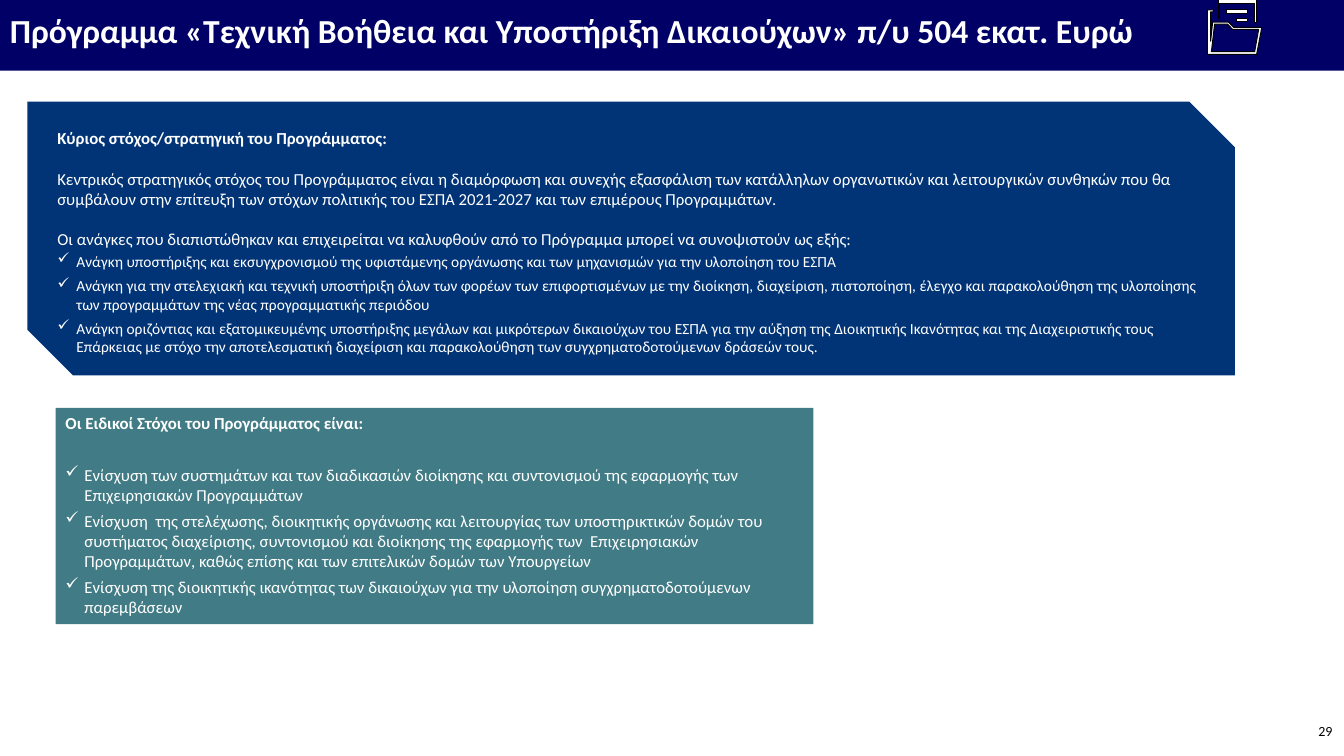
from lxml.etree import SubElement
from pptx import Presentation
from pptx.dml.color import RGBColor
from pptx.enum.shapes import MSO_SHAPE
from pptx.enum.text import MSO_ANCHOR, MSO_AUTO_SIZE, PP_ALIGN
from pptx.oxml.ns import qn
from pptx.util import Cm, Pt

WHITE = RGBColor(0xFF, 0xFF, 0xFF)
BLACK = RGBColor(0, 0, 0)
NAVY = RGBColor(0x00, 0x00, 0x66)
BLUE = RGBColor(0x01, 0x34, 0x76)
TEAL = RGBColor(0x41, 0x7B, 0x85)

EVEN_MARGINS = dict.fromkeys(
    ("margin_left", "margin_top", "margin_right", "margin_bottom"), Cm(0.25))
TIGHT_MARGINS = {"margin_left": Cm(0.18), "margin_right": Cm(0.18),
                 "margin_top": Cm(0.08), "margin_bottom": Cm(0.08)}
LINE_GAP = Pt(14.65)
TICK_SPACING = {"space_before": Pt(2), "space_after": Pt(2)}
HEADING = {"bold": True}
SMALL = {"size": Pt(11)}

PAPER = [[(3167, 58), (3162, 58), (3162, 8), (3073, 8), (3073, 46), (3071, 46),
          (3071, 0), (3167, 0)]]
FOLDER = [[(3109, 69), (3096, 56), (3056, 56), (3051, 104), (3051, 30), (3058, 30),
           (3058, 25), (3043, 25), (3043, 137), (3167, 137), (3180, 69)],
          [(3162, 130), (3053, 130), (3061, 61), (3094, 61), (3106, 74), (3172, 74)]]
PAPER_LINES = [(30.91, 0.25, 0.53, 0.08), (31.17, 0.46, 0.28, 0.08)]

GOAL = [
    ("Κύριος στόχος/στρατηγική του Προγράμματος:", HEADING, {}),
    ("Κεντρικός στρατηγικός στόχος του Προγράμματος είναι η διαμόρφωση και συνεχής "
     "εξασφάλιση των κατάλληλων οργανωτικών και λειτουργικών συνθηκών που θα συμβάλουν "
     "στην επίτευξη των στόχων πολιτικής του ΕΣΠΑ 2021-2027 και των επιμέρους "
     "Προγραμμάτων.", {}, {"space_before": LINE_GAP}),
    ("Οι ανάγκες που διαπιστώθηκαν και επιχειρείται να καλυφθούν από το Πρόγραμμα "
     "μπορεί να συνοψιστούν ως εξής:", {}, {"space_before": LINE_GAP}),
]
NEEDS = [
    "Ανάγκη υποστήριξης και εκσυγχρονισμού της υφιστάμενης οργάνωσης και των μηχανισμών "
    "για την υλοποίηση του ΕΣΠΑ",
    "Ανάγκη για την στελεχιακή και τεχνική υποστήριξη όλων των φορέων των επιφορτισμένων "
    "με την διοίκηση, διαχείριση, πιστοποίηση, έλεγχο και παρακολούθηση της υλοποίησης "
    "των προγραμμάτων της νέας προγραμματικής περιόδου",
    "Ανάγκη οριζόντιας και εξατομικευμένης υποστήριξης μεγάλων και μικρότερων δικαιούχων "
    "του ΕΣΠΑ για την αύξηση της Διοικητικής Ικανότητας και της Διαχειριστικής τους "
    "Επάρκειας με στόχο την αποτελεσματική διαχείριση και παρακολούθηση των "
    "συγχρηματοδοτούμενων δράσεών τους.",
]
OBJECTIVES = [
    "Ενίσχυση των συστημάτων και των διαδικασιών διοίκησης και συντονισμού της εφαρμογής "
    "των Επιχειρησιακών Προγραμμάτων",
    "Ενίσχυση  της στελέχωσης, διοικητικής οργάνωσης και λειτουργίας των υποστηρικτικών "
    "δοµών του συστήματος διαχείρισης, συντονισμού και διοίκησης της εφαρμογής των  "
    "Επιχειρησιακών Προγραμμάτων, καθώς επίσης και των επιτελικών δομών των Υπουργείων",
    "Ενίσχυση της διοικητικής ικανότητας των δικαιούχων για την υλοποίηση "
    "συγχρηματοδοτούμενων παρεμβάσεων",
]


def apply(target, formats):
    for name, value in formats.items():
        setattr(target, name, value)


class SlideBuilder:
    """Holds the common text style and the slide being built."""

    font = {"name": "Calibri", "size": Pt(12), "bold": False}

    def __init__(self, deck):
        self.slide = deck.slides.add_slide(deck.slide_layouts[5])

    def title(self, text, left, top, width, height):
        box = self.slide.shapes.title
        apply(box, {"left": Cm(left), "top": Cm(top),
                    "width": Cm(width), "height": Cm(height)})
        self.paint(box, NAVY)
        self.frame(box, EVEN_MARGINS, vertical_anchor=MSO_ANCHOR.MIDDLE)
        self.paragraph(box, text, {"size": Pt(24), "bold": True},
                       {"line_spacing": 0.9, "alignment": PP_ALIGN.LEFT})

    def text_box(self, left, top, width, height):
        box = self.slide.shapes.add_textbox(Cm(left), Cm(top), Cm(width), Cm(height))
        self.frame(box, EVEN_MARGINS, vertical_anchor=MSO_ANCHOR.MIDDLE)
        return box

    def panel(self, kind, fill, left, top, width, height, line=None):
        box = self.slide.shapes.add_shape(kind, Cm(left), Cm(top), Cm(width), Cm(height))
        self.paint(box, fill, line)
        return box

    def outline(self, contours, fill, line):
        """Draw closed contours given in hundredths of a centimetre."""
        builder = self.slide.shapes.build_freeform(*contours[0][0], scale=float(Cm(0.01)))
        for number, (start, *points) in enumerate(contours):
            if number:
                builder.move_to(*start)
            builder.add_line_segments(points, close=True)
        self.paint(builder.convert_to_shape(), fill, line)

    def paint(self, shape, fill, line=None):
        shape.fill.solid()
        shape.fill.fore_color.rgb = fill
        if line is None:
            shape.line.fill.background()
        else:
            shape.line.color.rgb = line
            shape.line.width = Pt(0.75)
        if not shape.is_placeholder:
            shape.shadow.inherit = False

    def frame(self, box, margins, **formats):
        apply(box.text_frame, {"word_wrap": True, "auto_size": MSO_AUTO_SIZE.NONE,
                               "vertical_anchor": MSO_ANCHOR.TOP, **margins, **formats})

    def paragraph(self, box, text, font, formats, color=WHITE):
        frame = box.text_frame
        para = frame.paragraphs[0] if not frame.text else frame.add_paragraph()
        apply(para, {"alignment": PP_ALIGN.LEFT, **formats})
        span = para.add_run()
        span.text = text
        apply(span.font, {**self.font, **font})
        span.font.color.rgb = color
        return para

    def tick(self, box, text, font, formats):
        para = self.paragraph(box, text, font, {**TICK_SPACING, **formats})
        properties = para._p.get_or_add_pPr()
        properties.set("marL", str(Cm(0.48)))
        properties.set("indent", str(-Cm(0.48)))
        color = SubElement(properties, qn("a:buClr"))
        SubElement(color, qn("a:srgbClr"), val=str(WHITE))
        SubElement(properties, qn("a:buChar"), char="✓")


def main():
    deck = Presentation()
    deck.slide_width, deck.slide_height = Cm(33.87), Cm(19.05)
    page = SlideBuilder(deck)
    page.title("Πρόγραμμα «Τεχνική Βοήθεια και Υποστήριξη Δικαιούχων» π/υ 504 εκατ. Ευρώ",
               0, -0.15, 33.87, 1.93)
    number = page.text_box(31.8, 17.7, 2.03, 1.45)
    page.paragraph(number, "29", {"size": Pt(10)}, {"alignment": PP_ALIGN.RIGHT}, BLACK)

    for contours in (PAPER, FOLDER):
        page.outline(contours, WHITE, BLACK)
    for place in PAPER_LINES:
        page.panel(MSO_SHAPE.RECTANGLE, WHITE, *place, line=BLACK)

    strategy = page.panel(MSO_SHAPE.SNIP_2_DIAG_RECTANGLE, BLUE, 0.69, 2.56, 30.43, 6.9)
    page.frame(strategy, TIGHT_MARGINS)
    for text, font, formats in GOAL:
        page.paragraph(strategy, text, font, formats)
    for text in NEEDS:
        page.tick(strategy, text, SMALL, {})

    objectives = page.panel(MSO_SHAPE.RECTANGLE, TEAL, 1.4, 10.28, 19.1, 5.45)
    page.frame(objectives, {}, auto_size=MSO_AUTO_SIZE.SHAPE_TO_FIT_TEXT)
    page.paragraph(objectives, "Οι Ειδικοί Στόχοι του Προγράμματος είναι:", HEADING,
                   {"space_after": Pt(2)})
    for index, text in enumerate(OBJECTIVES):
        page.tick(objectives, text, {}, {} if index else {"space_before": LINE_GAP + Pt(6)})
    deck.save("out.pptx")


if __name__ == "__main__":
    main()
